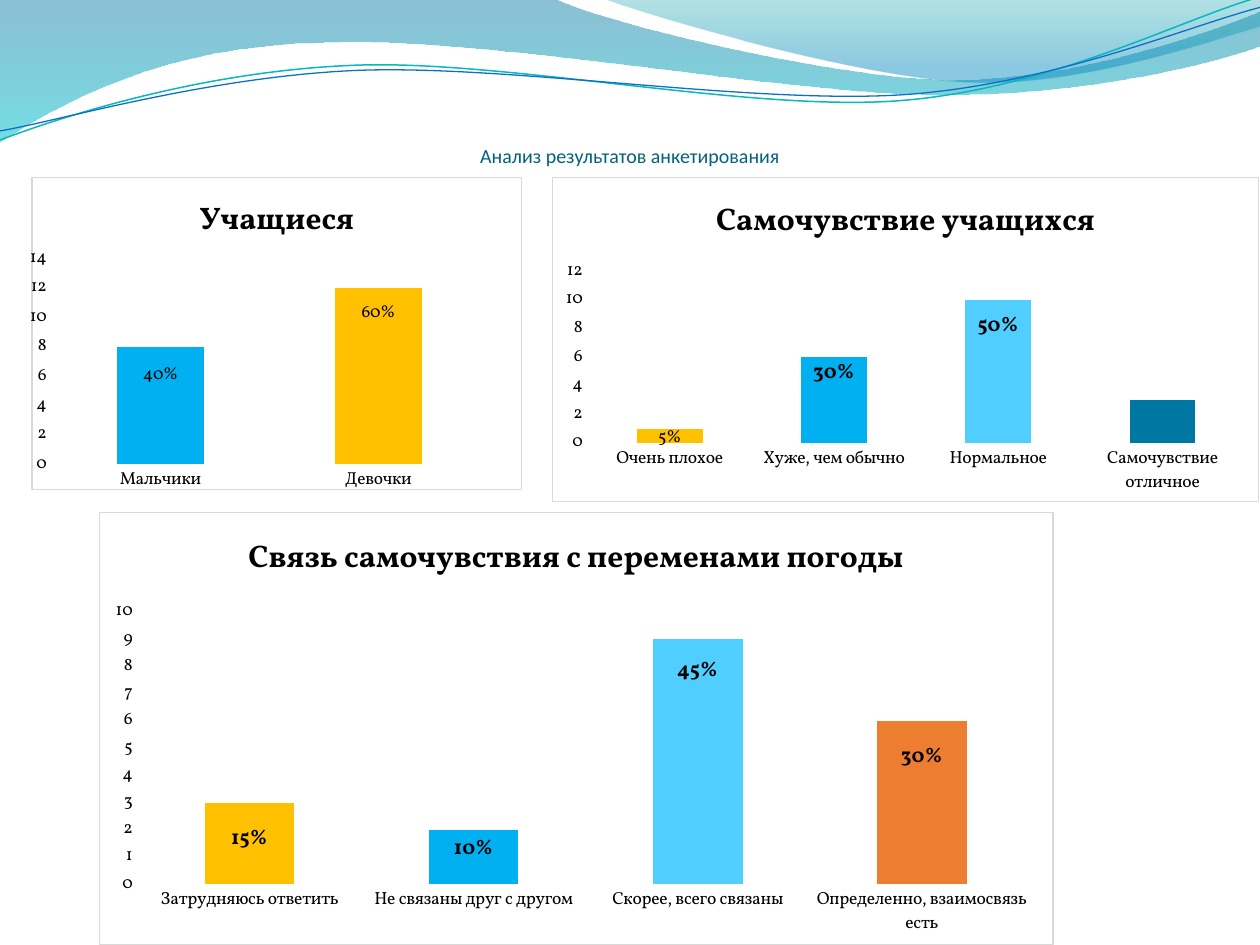
"""Build the questionnaire results slide: a wave header, a title and three column charts."""
import math
from dataclasses import dataclass

import lxml.etree
import pptx
import pptx.chart.data
import pptx.dml.color
import pptx.enum.chart
import pptx.enum.text
import pptx.oxml
import pptx.oxml.ns
import pptx.util

Cm, Pt, qn = pptx.util.Cm, pptx.util.Pt, pptx.oxml.ns.qn


@dataclass(frozen=True)
class Theme:
    heading_font: str = "Calibri"
    chart_font: str = "Vollkorn"
    heading_size: float = 11.4
    chart_title_size: float = 18
    label_size: float = 10
    strong_size: float = 12
    heading: str = "04617B"
    text: str = "000000"
    panel: str = "FFFFFF"
    border: str = "D9D9D9"
    amber: str = "FFC000"
    blue: str = "00B0F0"
    sky: str = "4FCEFF"
    navy: str = "0076A3"
    orange: str = "ED7D31"
    series: str = "5B9BD5"
    teal_line: str = "09B7BF"
    blue_line: str = "0F6FC6"
    lower_wave: tuple = ((0, "0074A0", 45), (1, "00C4CD", 55))
    upper_wave: tuple = ((0.2, "008ABF", 45), (1, "00A0A8", 30))


def rgb(color):
    return pptx.dml.color.RGBColor.from_string(color)


def turned(points, pivot, degrees):
    cos, sin = math.cos(math.radians(degrees)), math.sin(math.radians(degrees))
    px, py = pivot
    return [(px + (x - px) * cos - (y - py) * sin, py + (x - px) * sin + (y - py) * cos)
            for x, y in points]


def manual_layout(**settings):
    layout = lxml.etree.Element(qn("c:layout"))
    manual = lxml.etree.SubElement(layout, qn("c:manualLayout"))
    for tag, value in settings.items():
        lxml.etree.SubElement(manual, qn(f"c:{tag}")).set("val", str(value))
    return layout


class SlideBuilder:
    def __init__(self, slide, theme):
        self.slide = slide
        self.theme = theme

    def style(self, font, size, bold=False, color=None, name=None):
        font.name = name or self.theme.chart_font
        font.size = Pt(size)
        font.bold = bold
        font.color.rgb = rgb(color or self.theme.text)

    def outline(self, start, segments, close):
        """Draw segments of one point as lines and of three points as Bezier curves."""
        ends = [(Cm(x), Cm(y)) for x, y in [start] + [segment[-1] for segment in segments]]
        builder = self.slide.shapes.build_freeform(*ends[0])
        builder.add_line_segments(ends[1:], close=close)
        shape = builder.convert_to_shape()
        shape.shadow.inherit = False
        for line, segment in zip(list(shape._element.iter(qn("a:lnTo"))), segments):
            if len(segment) == 1:
                continue
            curve = lxml.etree.Element(qn("a:cubicBezTo"))
            for x, y in segment:
                point = lxml.etree.SubElement(curve, qn("a:pt"))
                point.set("x", str(Cm(x) - shape.left))
                point.set("y", str(Cm(y) - shape.top))
            line.getparent().replace(line, curve)
        return shape

    def wave(self, start, segments, stops, angle):
        shape = self.outline(start, segments, True)
        shape.line.fill.background()
        shape.fill.gradient()
        shape.fill.gradient_angle = angle
        for stop, (position, color, _) in zip(shape.fill.gradient_stops, stops):
            stop.position = position
            stop.color.rgb = rgb(color)
        for color_element, (_, _, opacity) in zip(shape._element.spPr.iter(qn("a:srgbClr")), stops):
            lxml.etree.SubElement(color_element, qn("a:alpha")).set("val", str(opacity * 1000))

    def ribbon(self, start, segments, pivot, color, width, tilt=-2.7):
        flat = [turned(segment, pivot, -tilt) for segment in segments]
        shape = self.outline(turned([start], pivot, -tilt)[0], flat, False)
        shape.rotation = tilt
        shape.fill.background()
        shape.line.color.rgb = rgb(color)
        shape.line.width = Pt(width)

    def title(self, text, box):
        heading = self.slide.shapes.title
        heading.left, heading.top, heading.width, heading.height = map(Cm, box)
        frame = heading.text_frame
        frame.text = text
        frame.auto_size = pptx.enum.text.MSO_AUTO_SIZE.NONE
        frame.vertical_anchor = pptx.enum.text.MSO_ANCHOR.BOTTOM
        frame.margin_left = frame.margin_right = frame.margin_bottom = 0
        frame.paragraphs[0].alignment = pptx.enum.text.PP_ALIGN.CENTER
        self.style(frame.paragraphs[0].runs[0].font, self.theme.heading_size,
                   color=self.theme.heading, name=self.theme.heading_font)

    def column_chart(self, title, box, columns, scale, plot_box):
        """Columns are (category, value, color, label, bold label, label drop)."""
        data = pptx.chart.data.CategoryChartData()
        data.categories = [column[0] for column in columns]
        data.add_series(title, [column[1] for column in columns])
        kind = pptx.enum.chart.XL_CHART_TYPE.COLUMN_CLUSTERED
        chart = self.slide.shapes.add_chart(kind, *map(Cm, box), data).chart
        self.style(chart.font, self.theme.label_size)
        chart.has_legend = False
        chart.has_title = True
        chart.chart_title.text_frame.text = title
        self.style(chart.chart_title.text_frame.paragraphs[0].runs[0].font,
                   self.theme.chart_title_size, bold=True)
        self.axes(chart, scale)
        plot = chart.plots[0]
        plot.gap_width = 150
        plot.vary_by_categories = False
        self.columns(plot.series[0], columns)
        self.panel(chart, plot_box)

    def axes(self, chart, scale):
        for axis in (chart.category_axis, chart.value_axis):
            axis.has_major_gridlines = False
            axis.major_tick_mark = axis.minor_tick_mark = pptx.enum.chart.XL_TICK_MARK.NONE
            axis.format.line.fill.background()
            self.style(axis.tick_labels.font, self.theme.label_size)
        chart.value_axis.minimum_scale = 0
        chart.value_axis.maximum_scale, chart.value_axis.major_unit = scale

    def columns(self, series, columns):
        series.format.fill.solid()
        series.format.fill.fore_color.rgb = rgb(self.theme.series)
        for index, (_, _, color, label, bold, drop) in enumerate(columns):
            point = series.points[index]
            point.format.fill.solid()
            point.format.fill.fore_color.rgb = rgb(color)
            if not label:
                continue
            frame = point.data_label.text_frame
            frame.text = label
            size = self.theme.strong_size if bold else self.theme.label_size
            self.style(frame.paragraphs[0].runs[0].font, size, bold)
            point.data_label.position = pptx.enum.chart.XL_LABEL_POSITION.INSIDE_END
            label_element = list(series._element.iter(qn("c:dLbl")))[-1]
            label_element.find(qn("c:idx")).addnext(manual_layout(x=0, y=drop))
        for leader in series._element.iter(qn("c:showLeaderLines")):
            leader.set("val", "0")

    def panel(self, chart, plot_box):
        space = chart._chartSpace
        area = space.find(qn("c:chart")).find(qn("c:plotArea"))
        for layout in area.findall(qn("c:layout")):
            area.remove(layout)
        x, y, w, h = plot_box
        area.insert(0, manual_layout(layoutTarget="inner", xMode="edge", yMode="edge",
                                     x=x, y=y, w=w, h=h))
        space.find(qn("c:chart")).addnext(pptx.oxml.parse_xml(
            f'<c:spPr {pptx.oxml.ns.nsdecls("c", "a")}>'
            f'<a:solidFill><a:srgbClr val="{self.theme.panel}"/></a:solidFill>'
            f'<a:ln w="{Pt(0.75)}"><a:solidFill><a:srgbClr val="{self.theme.border}"/>'
            '</a:solidFill></a:ln></c:spPr>'))


def main():
    presentation = pptx.Presentation()
    presentation.slide_width, presentation.slide_height = Cm(25.4), Cm(19.05)
    theme = Theme()
    page = SlideBuilder(presentation.slides.add_slide(presentation.slide_layouts[5]), theme)

    page.wave((0, 0), [
        [(11.18, -0.03)], [(12.09, 0.43), (16.87, 1.6), (19.25, 1.6)],
        [(21.67, 1.6), (24.33, 0.66), (25.4, 0.23)], [(25.43, 0.91)],
        [(25, 1.12), (22.1, 1.93), (18.95, 1.91)], [(15.8, 1.91), (9.7, 0.71), (6.53, 0.86)],
        [(3.28, 0.89), (1.17, 2.11), (-0.03, 2.87)]], theme.lower_wave, 270)
    page.wave((12.17, -0.03), [
        [(12.93, 0.28), (17.32, 1.57), (19.53, 1.65)],
        [(21.74, 1.75), (24.41, 0.81), (25.4, 0.53)], [(25.4, 0)]], theme.upper_wave, 90)
    page.ribbon((0, 2.82), [
        [(1.22, 2.36), (4.01, 1.45), (7.04, 1.32)], [(10.03, 1.17), (15.06, 2.26), (18.11, 2.03)],
        [(21.16, 1.8), (23.83, 0.38), (25.35, -0.05)]], (12.67, 1.46), theme.teal_line, 0.85)
    page.ribbon((0, 2.64), [
        [(1.19, 2.44), (4.17, 1.55), (7.19, 1.42)], [(10.24, 1.3), (15.16, 2.11), (18.21, 1.91)],
        [(21.23, 1.7), (23.93, 0.53), (25.4, 0.15)]], (12.69, 1.5), theme.blue_line, 0.75)

    page.title("Анализ результатов анкетирования", (1.27, 1.96, 22.86, 1.42))
    page.column_chart("Учащиеся", (0.6, 3.57, 9.93, 6.36), [
        ("Мальчики", 8, theme.blue, "40%", False, 0.04),
        ("Девочки", 12, theme.amber, "60%", False, 0.03)],
        (14, 2), (0.04, 0.26, 0.89, 0.66))
    page.column_chart("Самочувствие учащихся", (11.12, 3.57, 14.27, 6.55), [
        ("Очень плохое", 1, theme.amber, "5%", False, -0.02),
        ("Хуже, чем обычно", 6, theme.blue, "30%", True, -0.01),
        ("Нормальное", 10, theme.sky, "50%", True, 0.02),
        ("Самочувствие отличное", 3, theme.navy, None, False, 0)],
        (12, 2), (0.05, 0.29, 0.93, 0.53))
    page.column_chart("Связь самочувствия с переменами погоды", (1.99, 10.32, 19.25, 8.74), [
        ("Затрудняюсь ответить", 3, theme.amber, "15%", True, 0.04),
        ("Не связаны друг с другом", 2, theme.blue, "10%", True, 0),
        ("Скорее, всего связаны", 9, theme.sky, "45%", True, 0.03),
        ("Определенно, взаимосвязь есть", 6, theme.orange, "30%", True, 0.04)],
        (10, 1), (0.04, 0.23, 0.94, 0.63))
    presentation.save("out.pptx")


if __name__ == "__main__":
    main()
